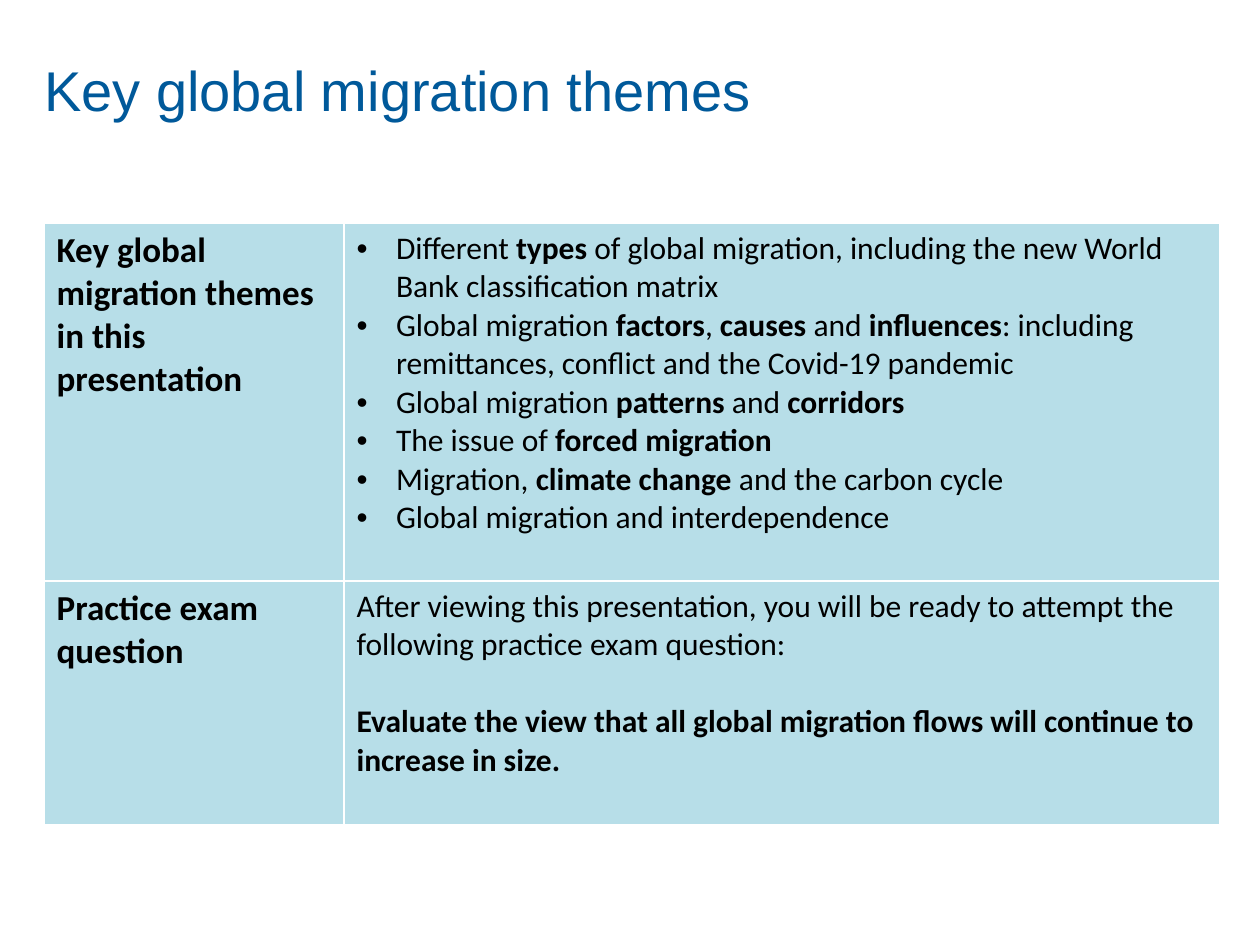
from lxml.etree import SubElement
from pptx import Presentation
from pptx.dml.color import RGBColor as Color
from pptx.enum.text import MSO_ANCHOR as Anchor
from pptx.oxml.ns import qn
from pptx.util import Pt

COLOURS = {"title": "00599A", "text": "000000", "cell": "B7DEE8", "border": "FFFFFF"}
FORMATS = {
    "title": {"name": "Arial", "size": Pt(32)},
    "heading": {"name": "Calibri", "size": Pt(20)},
    "body": {"name": "Calibri", "size": Pt(18)},
}
THEMES = [
    "Different **types** of global migration, including the new World Bank classification matrix",
    "Global migration **factors**, **causes** and **influences**: including remittances, "
    "conflict and the Covid-19 pandemic",
    "Global migration **patterns** and **corridors**",
    "The issue of **forced migration**",
    "Migration, **climate change **and the carbon cycle",
    "Global migration and interdependence",
]
QUESTION = [
    "After viewing this presentation, you will be ready to attempt the following "
    "practice exam question:",
    "**Evaluate the view that all global migration flows will continue to increase in size.**",
]
ROWS = [
    ("**Key global migration themes in this presentation**", THEMES,
     {"bulleted": True}),
    ("**Practice exam question**", QUESTION, {"gap": 22}),
]


class SlideBuilder:
    def __init__(self, slide, colours, formats):
        self.slide = slide
        self.colours = colours
        self.formats = formats

    def colour(self, name):
        return Color.from_string(self.colours[name])

    def add_text(self, frame, texts, style, colour="text", bulleted=False, gap=0):
        for index, text in enumerate(texts):
            paragraph = frame.paragraphs[0] if index == 0 else frame.add_paragraph()
            if bulleted:
                self.bullet(paragraph)
            if index and gap:
                paragraph.space_before = Pt(gap)
            for position, part in enumerate(text.split("**")):
                if part:
                    run = paragraph.add_run()
                    run.text = part
                    for name, value in self.formats[style].items():
                        setattr(run.font, name, value)
                    run.font.bold = position % 2 == 1
                    run.font.color.rgb = self.colour(colour)

    def bullet(self, paragraph):
        properties = paragraph._p.get_or_add_pPr()
        properties.set("marL", str(Pt(22.5)))
        properties.set("indent", str(-Pt(22.5)))
        SubElement(properties, qn("a:buFont"), typeface="Arial")
        SubElement(properties, qn("a:buChar"), char="•")

    def title(self, text, left, top, width, height, inset):
        shape = self.slide.shapes.add_textbox(Pt(left), Pt(top), Pt(width), Pt(height))
        frame = shape.text_frame
        layout = {
            "word_wrap": True, "vertical_anchor": Anchor.TOP, "margin_left": 0,
            "margin_right": 0, "margin_top": Pt(inset), "margin_bottom": 0,
        }
        for name, value in layout.items():
            setattr(frame, name, value)
        self.add_text(frame, [text], "title", "title")

    def style_cell(self, cell):
        properties = cell._tc.get_or_add_tcPr()
        for side in ("lnL", "lnR", "lnT", "lnB"):
            line = SubElement(properties, qn(f"a:{side}"), w=str(Pt(1)))
            fill = SubElement(line, qn("a:solidFill"))
            SubElement(fill, qn("a:srgbClr"), val=self.colours["border"])
        cell.fill.solid()
        cell.fill.fore_color.rgb = self.colour("cell")

    def table(self, rows, left, top, widths, heights):
        table = self.slide.shapes.add_table(
            len(rows), len(widths), Pt(left), Pt(top), Pt(sum(widths)), Pt(sum(heights))
        ).table
        table.first_row = table.horz_banding = False
        for column, width in zip(table.columns, widths):
            column.width = Pt(width)
        for row, height, (heading, texts, options) in zip(table.rows, heights, rows):
            row.height = Pt(height)
            for cell in row.cells:
                self.style_cell(cell)
            self.add_text(row.cells[0].text_frame, [heading], "heading")
            self.add_text(row.cells[1].text_frame, texts, "body", **options)


def main():
    presentation = Presentation()
    presentation.slide_width, presentation.slide_height = Pt(720), Pt(540)
    slide = presentation.slides.add_slide(presentation.slide_layouts[6])
    builder = SlideBuilder(slide, COLOURS, FORMATS)
    builder.title("Key global migration themes", 25.2, 21.6, 450, 93.6, inset=10)
    builder.table(ROWS, 25.2, 127.5, widths=(171.4, 500.4), heights=(204.6, 139))
    presentation.save("out.pptx")


if __name__ == "__main__":
    main()
